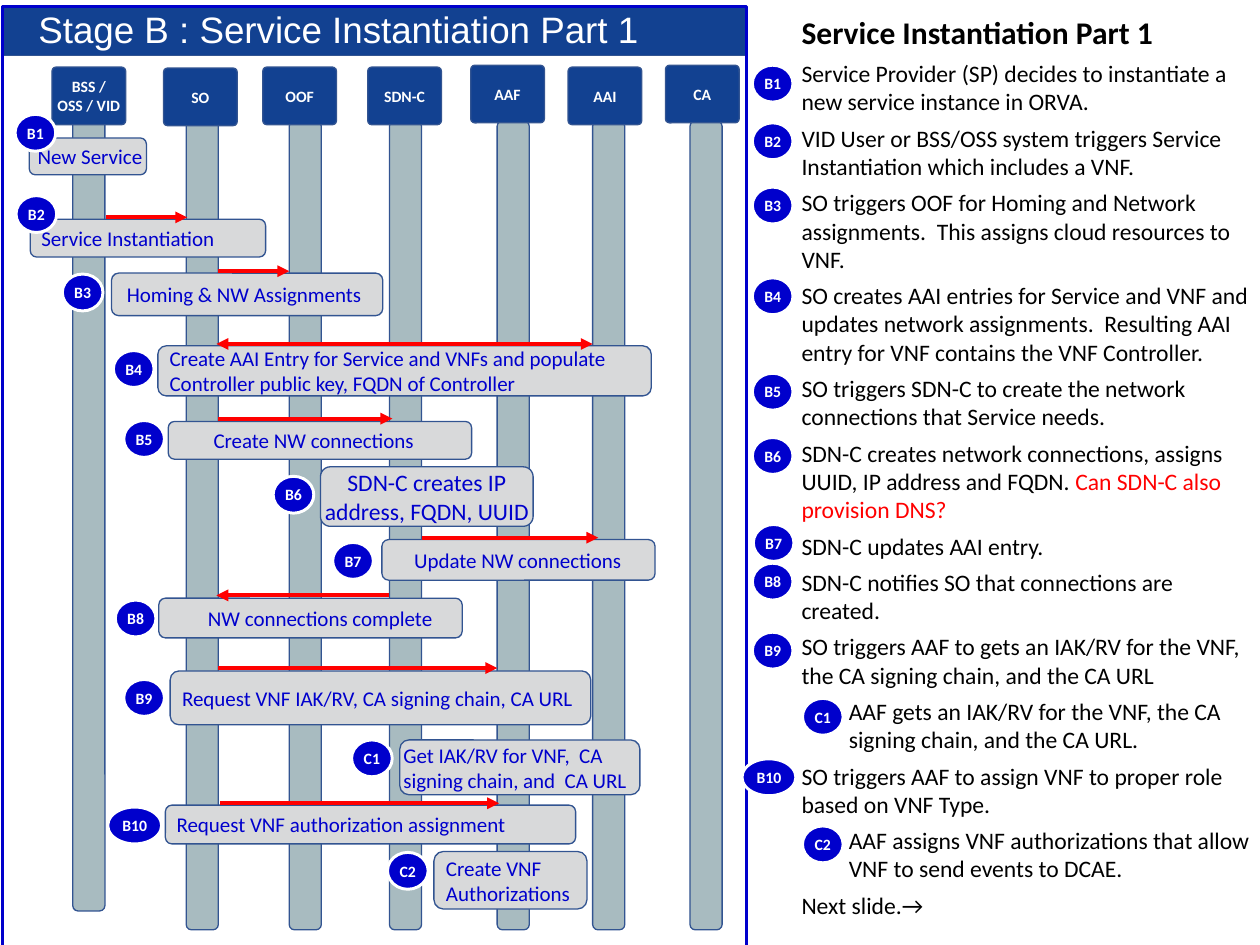
from lxml import etree
from pptx import Presentation
from pptx import util as u
from pptx.dml import color
from pptx.enum import shapes, text
from pptx.oxml import ns

HUES = {
    "navy": "124191", "edge": "325491", "lane": "A8BBC0", "step": "D8D9DA",
    "blue": "0000CC", "red": "FF0000", "white": "FFFFFF", "black": "000000",
}
KINDS = shapes.MSO_SHAPE
MID = text.PP_ALIGN.CENTER

# label, left, top of head, left of lane, top of lane, height of lane
LANES = [
    ("BSS / OSS / VID", 0.55, 0.71, 0.77, 0.95, 8.69),
    ("SO", 1.73, 0.72, 1.97, 1.28, 8.56),
    ("OOF", 2.78, 0.71, 3.06, 1.28, 8.56),
    ("SDN-C", 3.89, 0.71, 4.12, 1.28, 8.56),
    ("AAF", 4.98, 0.69, 5.26, 1.28, 8.56),
    ("AAI", 6.01, 0.71, 6.27, 1.28, 8.56),
    ("CA", 7.04, 0.69, 7.3, 1.28, 8.56),
]

# badge, its left and top, step box, left inset, words
STEPS = [
    ("B1", 0.16, 1.21, (0.31, 1.46, 1.24, 0.39), 0.07, "New Service"),
    ("B2", 0.17, 2.07, (0.32, 2.32, 2.49, 0.4), 0.1, "Service Instantiation"),
    ("B3", 0.66, 2.9, (1.18, 2.89, 2.87, 0.45), 0.14, "Homing & NW Assignments"),
    ("B4", 1.2, 3.71, (1.67, 3.66, 5.22, 0.53), 0.1,
     "Create AAI Entry for Service and VNFs and populate Controller public key, FQDN of Controller"),
    ("B5", 1.31, 4.45, (1.78, 4.46, 3.21, 0.4), 0.46, "Create NW connections"),
    ("B6", 2.89, 5.04, (3.39, 4.94, 2.25, 0.63), 0.01, "SDN-C creates IP address, FQDN, UUID"),
    ("B7", 3.52, 5.74, (4.04, 5.71, 2.89, 0.43), 0.32, "Update NW connections"),
    ("B8", 1.22, 6.35, (1.68, 6.33, 3.21, 0.42), 0.5, "NW connections complete"),
    ("B9", 1.31, 7.19, (1.8, 7.1, 4.45, 0.57), 0.1, "Request VNF IAK/RV, CA signing chain, CA URL"),
    ("C1", 3.72, 7.83, (4.23, 7.83, 2.54, 0.58), 0.01, "Get IAK/RV for VNF,  CA signing chain, and  CA URL"),
    ("B10", 1.14, 8.54, (1.75, 8.52, 4.34, 0.41), 0.1, "Request VNF authorization assignment"),
    ("C2", 4.1, 9.02, (4.59, 9.01, 1.62, 0.61), 0.1, "Create VNF Authorizations"),
]

# start, end, height on the page, arrowheads at both ends
CALLS = [
    (1.12, 1.98, 2.3, False), (2.31, 3.06, 2.87, False),
    (2.29, 6.27, 3.64, True), (2.31, 4.15, 4.43, False),
    (4.47, 6.33, 5.69, False), (4.12, 2.29, 6.3, False),
    (2.31, 5.26, 7.07, False), (2.33, 5.28, 8.5, False),
]

# badge, its left and top within the guide, runs of words
NOTES = [
    ("B1", 0.11, 0.69, ["Service Provider (SP) decides to instantiate a new service instance in ORVA."]),
    ("B2", 0.11, 1.3, ["VID User or BSS/OSS system triggers Service Instantiation which includes a VNF."]),
    ("B3", 0.11, 1.98, ["SO triggers OOF for Homing and Network assignments.  This assigns cloud resources to VNF."]),
    ("B4", 0.11, 2.94, ["SO creates AAI entries for Service and VNF and updates network assignments.  "
                        "Resulting AAI entry for VNF contains the VNF Controller."]),
    ("B5", 0.11, 3.95, ["SO triggers SDN-C to create the network connections that Service needs."]),
    ("B6", 0.11, 4.63, ["SDN-C creates network connections, assigns UUID, IP address and FQDN. ",
                        "Can SDN-C also provision DNS?"]),
    ("B7", 0.12, 5.55, ["SDN-C updates AAI entry."]),
    ("B8", 0.11, 5.96, ["SDN-C notifies SO that connections are created."]),
    ("B9", 0.11, 6.69, ["SO triggers AAF to gets an IAK/RV for the VNF, the CA signing chain, and the CA URL"]),
    ("C1", 0.64, 7.39, ["AAF gets an IAK/RV for the VNF, the CA signing chain, and the CA URL."]),
    ("B10", 0, 8.03, ["SO triggers AAF to assign VNF to proper role based on VNF Type."]),
    ("C2", 0.64, 8.74, ["AAF assigns VNF authorizations that allow VNF to send events to DCAE."]),
    (None, 0, 0, ["Next slide.→"]),
]


def tint(name):
    return color.RGBColor.from_string(HUES[name])


def add_run(para, words, size, hue, bold=False, font="Calibri"):
    run = para.add_run()
    run.text = words
    run.font.name, run.font.size, run.font.bold = font, u.Pt(size), bold
    run.font.color.rgb = tint(hue)


def set_pads(frame, left, top, right, bottom):
    frame.margin_left, frame.margin_top = u.Inches(left), u.Inches(top)
    frame.margin_right, frame.margin_bottom = u.Inches(right), u.Inches(bottom)


def add_block(slide, kind, box, fill, edge="edge", width=1):
    shape = slide.shapes.add_shape(kind, *map(u.Inches, box))
    shape.shadow.inherit = False
    if fill:
        shape.fill.solid()
        shape.fill.fore_color.rgb = tint(fill)
    else:
        shape.fill.background()
    shape.line.color.rgb = tint(edge)
    shape.line.width = u.Pt(width)
    return shape


def add_label(shape, words, size, hue, pads, align=MID, wrap=True, **style):
    frame = shape.text_frame
    frame.word_wrap = wrap
    frame.vertical_anchor = text.MSO_ANCHOR.MIDDLE
    set_pads(frame, *pads)
    para = frame.paragraphs[0]
    para.alignment = align
    add_run(para, words, size, hue, **style)


def add_badge(slide, left, top, mark):
    wide = 0.57 if len(mark) > 2 else 0.43
    disc = add_block(slide, KINDS.OVAL, (left, top, wide, 0.39), "blue", "white", 2.25)
    add_label(disc, mark, 12, "white", [0.04] * 4, wrap=False, bold=True)


def add_call(slide, start, end, level, both):
    line = slide.shapes.add_connector(
        shapes.MSO_CONNECTOR.STRAIGHT, *map(u.Inches, (start, level, end, level)))
    line.line.color.rgb = tint("red")
    line.line.width = u.Pt(3)
    stroke = line.line._get_or_add_ln()
    for tag in ["a:headEnd", "a:tailEnd"] if both else ["a:tailEnd"]:
        etree.SubElement(stroke, ns.qn(tag), type="triangle")
    etree.SubElement(line._element.spPr, ns.qn("a:effectLst"))


def draw_flow(slide, box):
    x, y, wide, high = box
    for _, _, _, left, top, tall in LANES:
        add_block(slide, KINDS.ROUNDED_RECTANGLE, (x + left, y + top, 0.34, tall), "lane")
    bar = add_block(slide, KINDS.RECTANGLE, (x + 0.03, y + 0.07, wide, 0.52), "navy")
    add_label(bar, "Stage B : Service Instantiation Part 1", 28, "white",
              (0.1, 0.05, 0.87, 0.1), font="Arial")
    add_block(slide, KINDS.RECTANGLE, (x + 0.03, y + 0.07, wide, high), None, "blue", 2.25)
    for name, left, top, *_ in LANES:
        head = add_block(slide, KINDS.ROUNDED_RECTANGLE, (x + left, y + top, 0.78, 0.61), "navy")
        head.adjustments[0] = 0.07
        add_label(head, name, 12, "white", (0.02, 0.05, 0.02, 0.05), bold=True)
    for mark, left, top, (sx, sy, sw, sh), pad, words in STEPS:
        step = add_block(slide, KINDS.ROUNDED_RECTANGLE, (x + sx, y + sy, sw, sh), "step")
        main = mark == "B6"
        add_label(step, words, 18 if main else 16, "blue", (pad, 0.05, 0.01, 0.05),
                  MID if main else text.PP_ALIGN.LEFT)
        add_badge(slide, x + left, y + top, mark)
    for start, end, level, both in CALLS:
        add_call(slide, x + start, x + end, y + level, both)


def draw_guide(slide, box):
    x, y, wide, high = box
    panel = slide.shapes.add_textbox(*map(u.Inches, (x + 0.55, y + 0.06, wide - 0.55, high)))
    frame = panel.text_frame
    frame.word_wrap = True
    set_pads(frame, *[0.08] * 4)
    para = frame.paragraphs[0]
    para.space_after = u.Pt(6)
    add_run(para, "Service Instantiation Part 1", 24, "black", bold=True)
    for mark, left, top, runs in NOTES:
        para = frame.add_paragraph()
        para.space_after = u.Pt(6)
        if mark in ("C1", "C2"):
            para.level = 1
            props = para._p.get_or_add_pPr()
            props.set("marL", str(u.Inches(0.5)))
            props.set("indent", "0")
        for words, hue in zip(runs, ("black", "red")):
            add_run(para, words, 18, hue)
        if mark:
            add_badge(slide, x + left, y + top, mark)


def main():
    deck = Presentation()
    deck.slide_width, deck.slide_height = u.Inches(13.33), u.Inches(10)
    slide = deck.slides.add_slide(deck.slide_layouts[6])
    draw_flow(slide, (0, 0, 7.87, 9.99))
    draw_guide(slide, (7.85, 0, 5.49, 9.84))
    deck.save("out.pptx")


if __name__ == "__main__":
    main()
